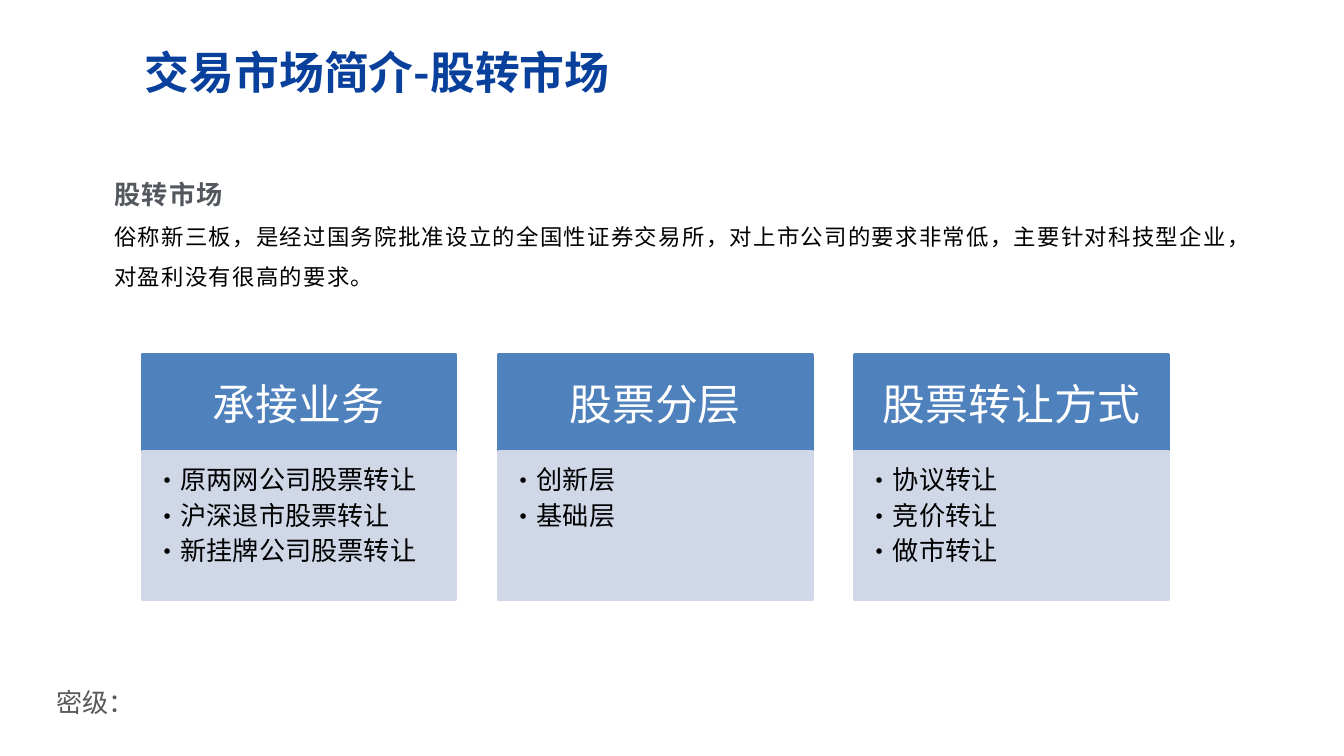
from dataclasses import dataclass

from lxml import etree
from pptx import Presentation
from pptx.dml.color import RGBColor
from pptx.enum.shapes import MSO_SHAPE
from pptx.enum.text import MSO_ANCHOR, MSO_AUTO_SIZE, PP_ALIGN
from pptx.oxml.ns import qn
from pptx.util import Inches, Pt

RECTANGLE = MSO_SHAPE.RECTANGLE
TOP, MIDDLE = MSO_ANCHOR.TOP, MSO_ANCHOR.MIDDLE
LEFT, CENTER = PP_ALIGN.LEFT, PP_ALIGN.CENTER
FIT_SHAPE = MSO_AUTO_SIZE.SHAPE_TO_FIT_TEXT
FONT = "Noto Sans CJK SC"
BLUE, PALE = "4F81BD", "D0D8E8"
COLUMN_LEFT, COLUMN_STEP, COLUMN_WIDTH = 1.06, 2.65, 2.33
HEADER_TOP, HEADER_HEIGHT, LIST_HEIGHT = 2.64, 0.72, 1.1


@dataclass
class Area:
    left: float
    top: float
    width: float
    height: float

    def lengths(self):
        return [Inches(n) for n in (self.left, self.top, self.width, self.height)]


@dataclass
class Style:
    size: float
    color: str
    bold: bool = False
    tracking: int = 0
    line_spacing: float = 1.0
    space_after: float = 0
    align: PP_ALIGN = LEFT
    bullet: bool = False


@dataclass
class Column:
    heading: str
    items: list[str]


COLUMNS = [
    Column("承接业务", ["原两网公司股票转让", "沪深退市股票转让", "新挂牌公司股票转让"]),
    Column("股票分层", ["创新层", "基础层"]),
    Column("股票转让方式", ["协议转让", "竞价转让", "做市转让"]),
]
HEADING = Style(23, "FFFFFF", align=CENTER)
ITEM = Style(14, "000000", space_after=2.1, bullet=True)


def rgb(value: str) -> RGBColor:
    return RGBColor.from_string(value)


def add_text(page, area: Area, lines: list[tuple[str, Style]],
             insets=(0.1, 0.05, 0.1, 0.05), anchor=TOP, wrap=True):
    box = page.shapes.add_textbox(*area.lengths())
    frame = box.text_frame
    frame.word_wrap = wrap
    frame.vertical_anchor = anchor
    frame.margin_left, frame.margin_top, frame.margin_right, frame.margin_bottom = map(Inches, insets)
    for index, (text, style) in enumerate(lines):
        para = frame.add_paragraph() if index else frame.paragraphs[0]
        para.text = text
        para.alignment = style.align
        para.line_spacing = style.line_spacing
        para.space_after = Pt(style.space_after)
        properties = para._p.get_or_add_pPr()
        if style.bullet:
            para.level = 1
            properties.set("marL", str(Inches(0.12)))
            properties.set("indent", str(Inches(-0.12)))
            etree.SubElement(properties, qn("a:buFont"), typeface=FONT)
            etree.SubElement(properties, qn("a:buChar"), char="•")
        font = para.font
        font.name = FONT
        font.size = Pt(style.size)
        font.bold = style.bold
        font.color.rgb = rgb(style.color)
        defaults = properties.find(qn("a:defRPr"))
        defaults.set("spc", str(style.tracking))
        latin = defaults.find(qn("a:latin"))
        latin.addnext(etree.Element(qn("a:ea"), typeface=FONT))
    return box


def add_panel(page, area: Area, color: str):
    panel = page.shapes.add_shape(RECTANGLE, *area.lengths())
    panel.shadow.inherit = False
    panel.line.width = Pt(2)
    for fill in (panel.fill, panel.line.fill):
        fill.solid()
        fill.fore_color.rgb = rgb(color)


def add_column(page, left: float, column: Column):
    header = Area(left, HEADER_TOP, COLUMN_WIDTH, HEADER_HEIGHT)
    listing = Area(left, HEADER_TOP + HEADER_HEIGHT, COLUMN_WIDTH, LIST_HEIGHT)
    add_panel(page, header, BLUE)
    add_text(page, header, [(column.heading, HEADING)], insets=(0.18, 0.1, 0.18, 0.1), anchor=MIDDLE)
    add_panel(page, listing, PALE)
    add_text(page, listing, [(item, ITEM) for item in column.items], insets=(0.09, 0.09, 0.11, 0.12))


def main():
    deck = Presentation()
    deck.slide_width = Inches(10)
    deck.slide_height = deck.slide_width * 9 // 16
    page = deck.slides.add_slide(deck.slide_layouts[6])

    footer = add_text(page, Area(0.35, 5.07, 0.91, 0.31), [("密级：", Style(14, "595959"))],
                      insets=(0.07, 0.04, 0.07, 0.04), wrap=False)
    footer.text_frame.auto_size = FIT_SHAPE
    add_text(page, Area(0.98, 0.26, 6.06, 0.55),
             [("交易市场简介-股转市场", Style(24, "08409C", bold=True))], anchor=MIDDLE)
    add_text(page, Area(0.75, 1.16, 8.51, 1.19), [
        ("股转市场", Style(14, "53585F", bold=True, tracking=70, line_spacing=1.5)),
        ("俗称新三板，是经过国务院批准设立的全国性证券交易所，对上市公司的要求非常低，"
         "主要针对科技型企业，对盈利没有很高的要求。",
         Style(12, "000000", tracking=70, line_spacing=1.5)),
    ])
    for index, column in enumerate(COLUMNS):
        add_column(page, COLUMN_LEFT + index * COLUMN_STEP, column)
    deck.save("out.pptx")


if __name__ == "__main__":
    main()
